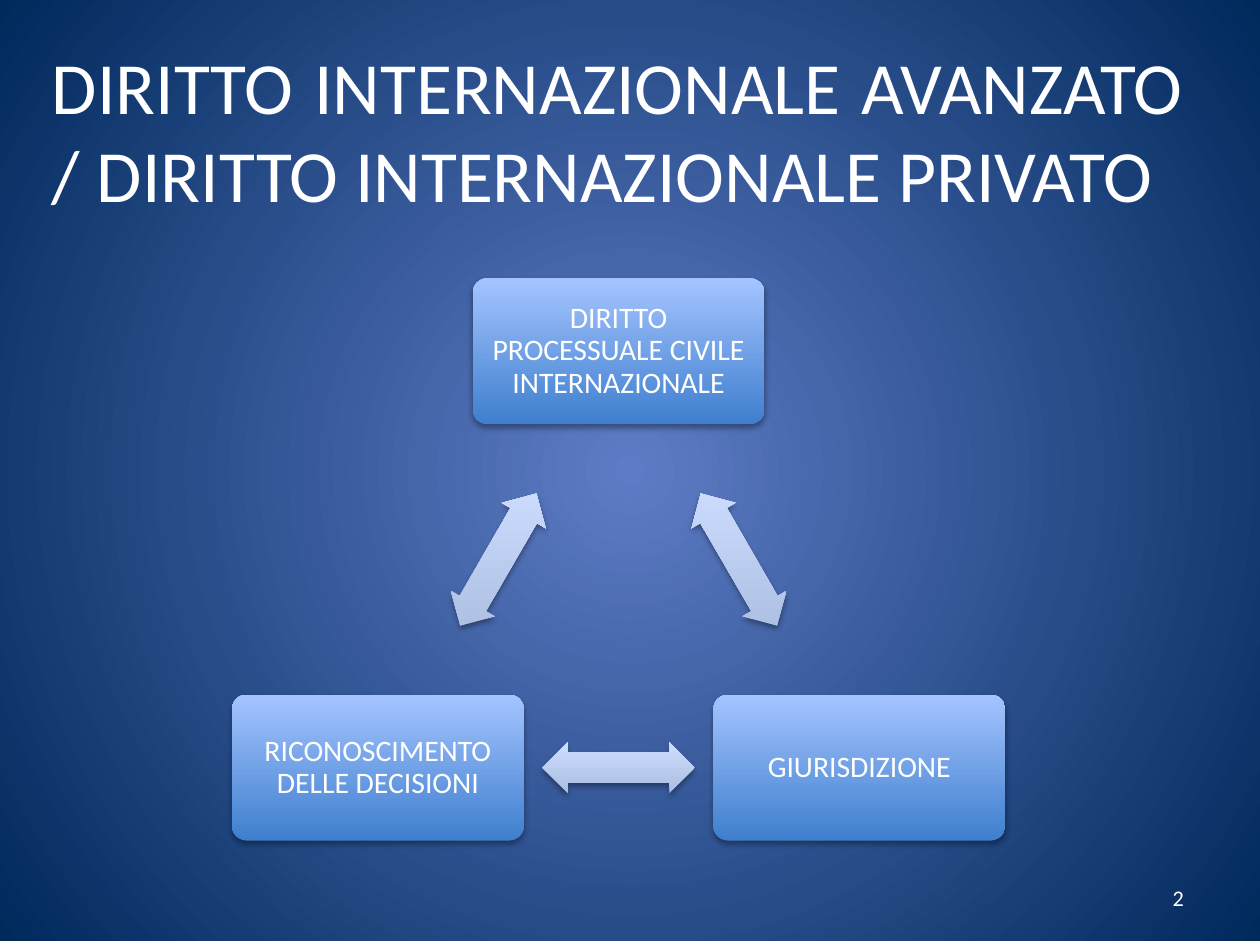
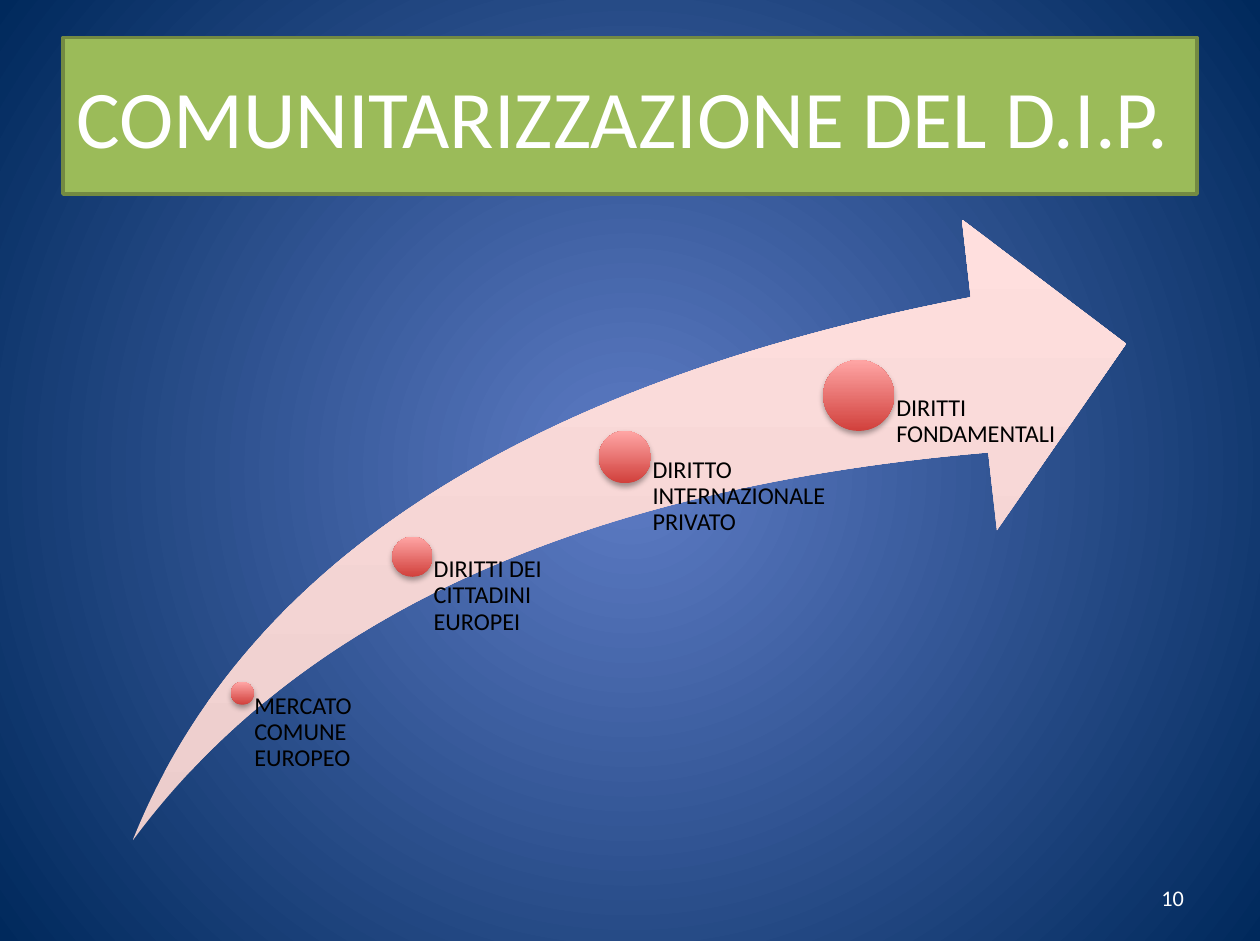
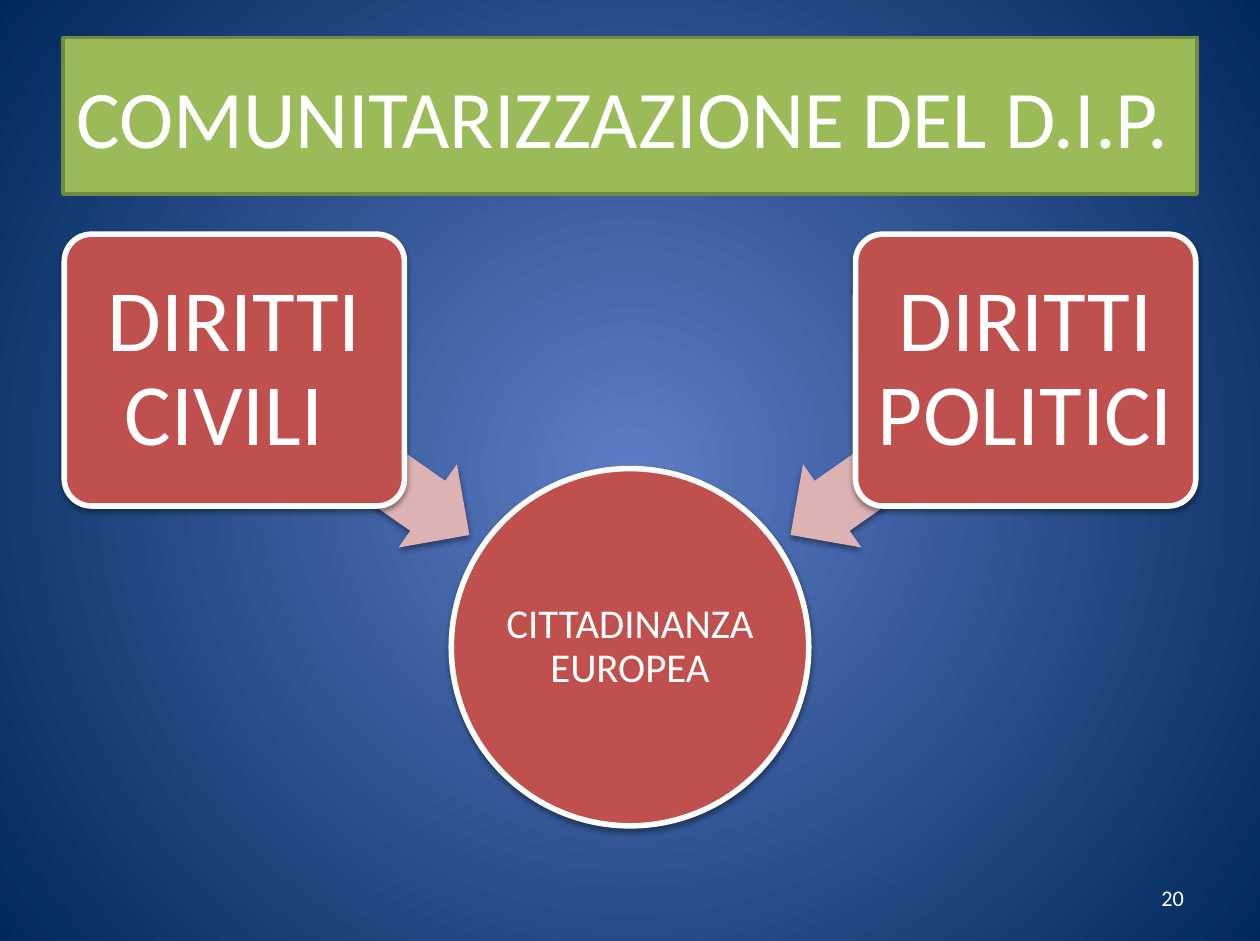
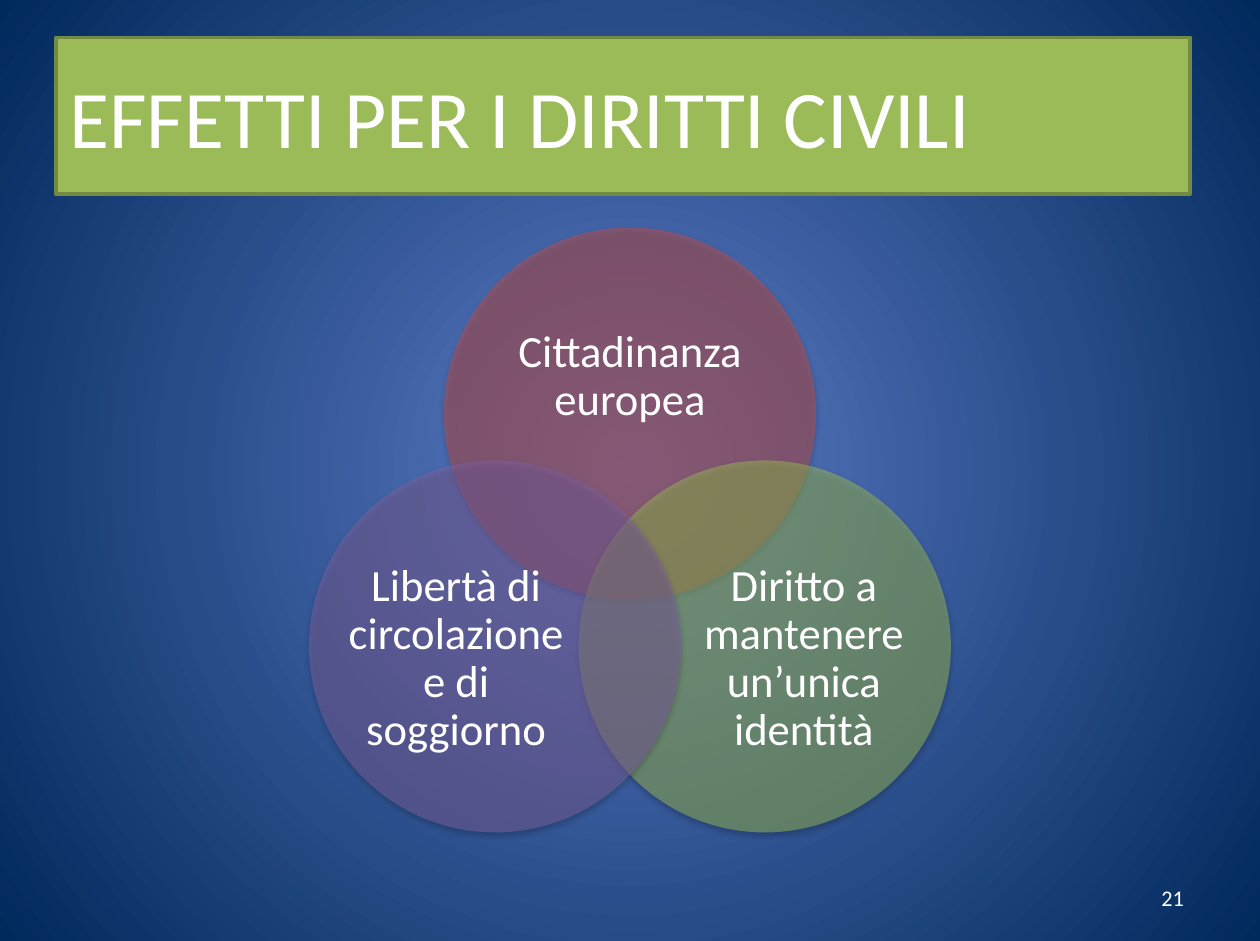
from itertools import combinations
from math import atan2, degrees

from lxml.etree import SubElement
from pptx import Presentation
from pptx.dml.color import RGBColor
from pptx.enum.shapes import MSO_SHAPE
from pptx.enum.text import MSO_ANCHOR, PP_ALIGN
from pptx.oxml.ns import qn
from pptx.util import Inches, Pt

WIDTH, HEIGHT = Inches(9.41), Inches(7.03)
COLUMN, ROW = WIDTH / 100, HEIGHT / 100
FONT = "Calibri"
COLOURS = {
    "white": "FFFFFF", "black": "000000",
    "glow": "5E7CC5", "night": "00295C",
    "green": "9BBB59", "green edge": "738A42",
    "red": "C0504D", "pale red": "DCB3B2", "purple": "8064A2",
    "blue low": "3F7FCE", "blue high": "A4C4FF",
    "mist low": "ADBFE1", "mist high": "CCDDFF",
    "rose low": "ECCDCC", "rose high": "FFDFDE",
    "coral low": "D1403C", "coral high": "FFA6A5",
}
TITLE_INSETS = (0.1, 0.05, 0.1, 0.05)
SOFT_SHADOW, FIRM_SHADOW = (35, 1.8), (38, 1.6)


def colour(name):
    """Return the named colour."""
    return RGBColor.from_string(COLOURS[name])


def area(centre, size):
    """Turn a centre and a size, in columns and rows, into left, top, width, height."""
    (x, y), (width, height) = centre, size
    return (round((x - width / 2) * COLUMN), round((y - height / 2) * ROW),
            round(width * COLUMN), round(height * ROW))


def square(columns):
    """Return the columns and rows of a square that is this many columns wide."""
    return columns, columns * COLUMN / ROW


def set_gradient(fill, names):
    """Fill with a gradient that runs from the first colour up to the second."""
    fill.gradient()
    fill.gradient_angle = 90
    for stop, name in zip(fill.gradient_stops, names):
        stop.color.rgb = colour(name)


def set_background(master):
    """Give every slide the same round glow."""
    set_gradient(master.background.fill, ("glow", "night"))
    gradient = master.element.find(".//" + qn("a:gradFill"))
    gradient.remove(gradient.find(qn("a:lin")))
    glow = SubElement(gradient, qn("a:path"), {"path": "circle"})
    SubElement(glow, qn("a:fillToRect"), dict.fromkeys("ltrb", "50000"))


def add_shadow(shape, opacity, distance):
    """Add a soft shadow below the shape."""
    effects = shape.element.spPr.find(qn("a:effectLst"))
    shadow = SubElement(effects, qn("a:outerShdw"), {
        "blurRad": str(Pt(3.1)), "dist": str(Pt(distance)),
        "dir": "5400000", "rotWithShape": "0"})
    black = SubElement(shadow, qn("a:srgbClr"), val=COLOURS["black"])
    SubElement(black, qn("a:alpha"), val=str(opacity * 1000))


def add_figure(page, kind, centre, size, fill, edge=None, shadow=None,
               adjustments=(), rotation=0, opacity=100):
    """Add a preset shape with a flat fill, or a gradient if fill is a pair."""
    figure = page.shapes.add_shape(kind, *area(centre, size))
    figure.shadow.inherit = False
    figure.rotation = rotation
    for index, value in enumerate(adjustments):
        figure.adjustments[index] = value
    if isinstance(fill, tuple):
        set_gradient(figure.fill, fill)
        figure.element.spPr.find(qn("a:gradFill")).set("rotWithShape", "0")
    else:
        figure.fill.solid()
        figure.fill.fore_color.rgb = colour(fill)
    if opacity < 100:
        tint = figure.element.spPr.find(".//" + qn("a:srgbClr"))
        SubElement(tint, qn("a:alpha"), val=str(opacity * 1000))
    if edge:
        name, points = edge
        figure.line.color.rgb = colour(name)
        figure.line.width = Pt(points)
    else:
        figure.line.fill.background()
    if shadow:
        add_shadow(figure, *shadow)
    return figure


def write(box, text, size, name="white", align=PP_ALIGN.CENTER,
          anchor=MSO_ANCHOR.MIDDLE, insets=(0, 0, 0, 0), spacing=0.9):
    """Write one paragraph into a shape or a text box."""
    frame = box.text_frame
    frame.word_wrap = True
    frame.vertical_anchor = anchor
    (frame.margin_left, frame.margin_top,
     frame.margin_right, frame.margin_bottom) = map(Inches, insets)
    para = frame.paragraphs[0]
    para.alignment = align
    para.line_spacing = spacing
    span = para.add_run()
    span.text = text
    span.font.name = FONT
    span.font.size = Pt(size)
    span.font.color.rgb = colour(name)


def add_text(page, centre, size, text, points, **style):
    """Add a text box."""
    write(page.shapes.add_textbox(*area(centre, size)), text, points, **style)


def add_page(deck, number):
    """Add a blank slide with its number at the foot."""
    page = deck.slides.add_slide(deck.slide_layouts[6])
    add_text(page, (83.32, 95.38), (23.38, 5.26), str(number), 12,
             align=PP_ALIGN.RIGHT, insets=TITLE_INSETS, spacing=1.0)
    return page


def add_title_band(page, text, x=50):
    """Add the green band that holds the title."""
    band = add_figure(page, MSO_SHAPE.RECTANGLE, (x, 12.3), (90, 16.64),
                      "green", edge=("green edge", 2))
    write(band, text, 44, align=PP_ALIGN.JUSTIFY, insets=TITLE_INSETS, spacing=1.0)


def add_triangle(page):
    """Add three cards joined by double arrows halfway between each pair."""
    cards = (("RICONOSCIMENTO DELLE DECISIONI", (30, 81.58)),
             ("DIRITTO PROCESSUALE CIVILE INTERNAZIONALE", (49.1, 37.34)),
             ("GIURISDIZIONE", (68.2, 81.58)))
    for text, centre in cards:
        card = add_figure(page, MSO_SHAPE.ROUNDED_RECTANGLE, centre, (23.17, 15.5),
                          ("blue low", "blue high"), shadow=SOFT_SHADOW,
                          adjustments=(0.1,))
        write(card, text, 16, insets=(0.07,) * 4)
    for (_, (x1, y1)), (_, (x2, y2)) in combinations(cards, 2):
        angle = degrees(atan2((y2 - y1) * ROW, (x2 - x1) * COLUMN))
        add_figure(page, MSO_SHAPE.LEFT_RIGHT_ARROW, ((x1 + x2) / 2, (y1 + y2) / 2),
                   (12.11, 5.41), ("mist low", "mist high"), shadow=SOFT_SHADOW,
                   adjustments=(0.6, 0.5), rotation=angle)


def add_rising_path(page):
    """Add the swoosh with its growing dots, each labelled from its centre."""
    middle, height = 56.33, 66
    bottom = middle + height / 2
    add_figure(page, MSO_SHAPE.SWOOSH_ARROW, (49.95, middle), (78.85, height),
               ("rose low", "rose high"), adjustments=(0.25, 0.25))
    steps = (("MERCATO COMUNE EUROPEO", 19.23, 73.68, 1.81, 13.5),
             ("DIRITTI DEI CITTADINI EUROPEI", 32.73, 59.17, 3.19, 16.58),
             ("DIRITTO INTERNAZIONALE PRIVATO", 49.6, 48.58, 4.14, 16.58),
             ("DIRITTI FONDAMENTALI", 68.15, 42.03, 5.63, 16.58))
    for text, x, y, diameter, width in steps:
        add_figure(page, MSO_SHAPE.OVAL, (x, y), square(diameter),
                   ("coral low", "coral high"), shadow=SOFT_SHADOW)
        indent = diameter * 0.53 * COLUMN / Inches(1)
        add_text(page, (x + width / 2, (y + bottom) / 2), (width, bottom - y),
                 text, 13, name="black", align=PP_ALIGN.LEFT,
                 anchor=MSO_ANCHOR.TOP, insets=(indent, 0, 0, 0))


def add_convergence(page):
    """Add two cards whose arrows point at the circle between them."""
    outline = {"edge": ("white", 3), "shadow": FIRM_SHADOW}
    circle = add_figure(page, MSO_SHAPE.OVAL, (50, 68.78), square(28.37),
                        "red", **outline)
    write(circle, "CITTADINANZA EUROPEA", 22, insets=(0.02,) * 4)
    for side, text in ((-1, "DIRITTI CIVILI "), (1, "DIRITTI POLITICI")):
        add_figure(page, MSO_SHAPE.LEFT_ARROW, (50 + side * 22.1, 48.08),
                   (22.85, 10.81), "pale red", shadow=FIRM_SHADOW,
                   adjustments=(0.6, 0.5), rotation=270 + side * 55)
        card = add_figure(page, MSO_SHAPE.ROUNDED_RECTANGLE,
                          (50 + side * 31.4, 39.33), (27, 28.88), "red",
                          adjustments=(0.1,), **outline)
        write(card, text, 47, insets=(0.1,) * 4)


def add_venn(page):
    """Add three overlapping circles, each with its text."""
    upper, lower = (21.68, 17.78), (17.75, 21.76)
    circles = (
        ("Cittadinanza europea", "red", (50, 43.95), (50, 40.04), upper),
        ("Diritto a mantenere un’unica identità", "green",
         (60.7, 68.7), (63.8, 70.06), lower),
        ("Libertà di circolazione e di soggiorno", "purple",
         (39.3, 68.7), (36.2, 70.06), lower))
    for text, fill, centre, text_centre, text_size in circles:
        add_figure(page, MSO_SHAPE.OVAL, centre, square(29.54), fill,
                   shadow=FIRM_SHADOW, opacity=50)
        add_text(page, text_centre, text_size, text, 24)


def main():
    """Build the four slides and save them."""
    deck = Presentation()
    deck.slide_width, deck.slide_height = WIDTH, HEIGHT
    set_background(deck.slide_master)

    page = add_page(deck, 2)
    add_text(page, (49.04, 13.73), (91.92, 24.32),
             "DIRITTO INTERNAZIONALE AVANZATO / DIRITTO INTERNAZIONALE PRIVATO",
             39.6, align=PP_ALIGN.JUSTIFY, insets=TITLE_INSETS, spacing=1.0)
    add_triangle(page)

    for number, add_diagram in ((10, add_rising_path), (20, add_convergence)):
        page = add_page(deck, number)
        add_title_band(page, "COMUNITARIZZAZIONE DEL D.I.P.")
        add_diagram(page)

    page = add_page(deck, 21)
    add_title_band(page, "EFFETTI PER I DIRITTI CIVILI", x=49.46)
    add_venn(page)

    deck.save("out.pptx")


if __name__ == "__main__":
    main()
